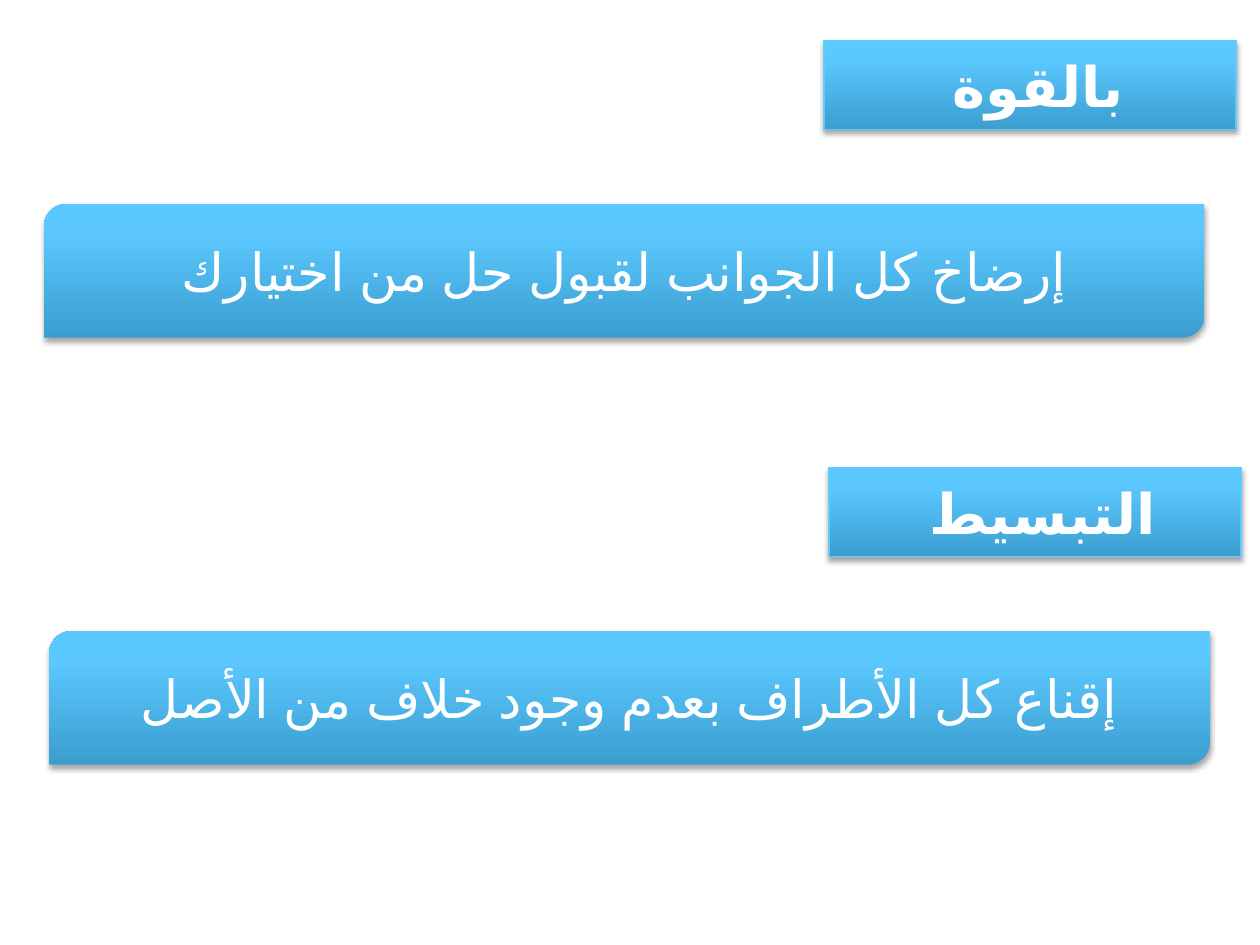
from copy import deepcopy

from lxml.etree import SubElement
from pptx import Presentation
from pptx.dml.color import RGBColor
from pptx.enum.lang import MSO_LANGUAGE_ID as Language
from pptx.enum.shapes import MSO_SHAPE as Shape
from pptx.enum.text import MSO_ANCHOR as Anchor, PP_ALIGN as Align
from pptx.oxml.ns import qn
from pptx.util import Inches, Pt

WHITE = RGBColor(0xFF, 0xFF, 0xFF)
EDGE_BLUE = RGBColor(0x60, 0xC9, 0xFD)
GRADIENT = (
    (0, RGBColor(0x3B, 0x9E, 0xCF)),
    (0.8, RGBColor(0x5B, 0xC8, 0xFF)),
    (1, RGBColor(0x5D, 0xC9, 0xFF)),
)
FONT = "Arial"
COLUMNS, ROWS = 10, 7.5  # one grid cell is one inch square
SECTION_STEP = (0.04, 3.39)
SECTIONS = (
    ("بالقوة ", "إرضاخ كل الجوانب لقبول حل من اختيارك"),
    ("التبسيط ", "إقناع كل الأطراف بعدم وجود خلاف من الأصل"),
)


def write_text(shape, text, size, bold=False, color=WHITE):
    """Put one centred right-to-left paragraph in the shape."""
    frame = shape.text_frame
    frame.word_wrap = True
    frame.vertical_anchor = Anchor.MIDDLE
    para = frame.paragraphs[0]
    para.alignment = Align.CENTER
    para._p.get_or_add_pPr().set("rtl", "1")
    span = para.add_run()
    span.text = text
    font = span.font
    font.name, font.size, font.bold = FONT, Pt(size), bold
    font.language_id = Language.ARABIC
    font.color.rgb = color
    SubElement(font._element, qn("a:cs"), typeface=FONT)


class SlidePainter:
    """Holds the slide and the glossy blue style of its boxes."""

    def __init__(self, deck):
        self.slide = deck.slides.add_slide(deck.slide_layouts[6])
        self.cell_width = deck.slide_width / COLUMNS
        self.cell_height = deck.slide_height / ROWS

    def glossy_box(self, kind, column, row, columns, rows):
        box = self.slide.shapes.add_shape(
            kind,
            round(column * self.cell_width), round(row * self.cell_height),
            round(columns * self.cell_width), round(rows * self.cell_height))
        self.paint_gradient(box)
        self.cast_shadow(box)
        return box

    def paint_gradient(self, box):
        box.fill.gradient()
        box.fill.gradient_angle = 90
        stop_list = box.element.spPr.find(qn("a:gradFill")).find(qn("a:gsLst"))
        stop_list.append(deepcopy(stop_list[-1]))
        for stop, (position, color) in zip(box.fill.gradient_stops, GRADIENT):
            stop.position = position
            stop.color.rgb = color

    def cast_shadow(self, box):
        box.shadow.inherit = False
        effects = box.element.spPr.find(qn("a:effectLst"))
        shadow = SubElement(
            effects, qn("a:outerShdw"), blurRad=str(Pt(3.1)),
            dist=str(Pt(1.8)), dir="5400000", rotWithShape="0")
        black = SubElement(shadow, qn("a:srgbClr"), val="000000")
        SubElement(black, qn("a:alpha"), val="35000")

    def heading(self, text, column, row):
        box = self.glossy_box(Shape.RECTANGLE, column, row, 3.27, 0.71)
        box.line.color.rgb = EDGE_BLUE
        box.line.width = Pt(0.75)
        write_text(box, text, size=32, bold=True)

    def statement(self, text, column, row):
        box = self.glossy_box(
            Shape.ROUND_2_DIAG_RECTANGLE, column, row, 9.21, 1.06)
        box.line.fill.background()
        write_text(box, text, size=30)


def main():
    deck = Presentation()
    deck.slide_width, deck.slide_height = Inches(10), Inches(7.5)
    painter = SlidePainter(deck)
    for index, (title, meaning) in enumerate(SECTIONS):
        right, down = (index * step for step in SECTION_STEP)
        painter.heading(title, 6.54 + right, 0.32 + down)
        painter.statement(meaning, 0.35 + right, 1.62 + down)
    deck.save("out.pptx")


if __name__ == "__main__":
    main()
